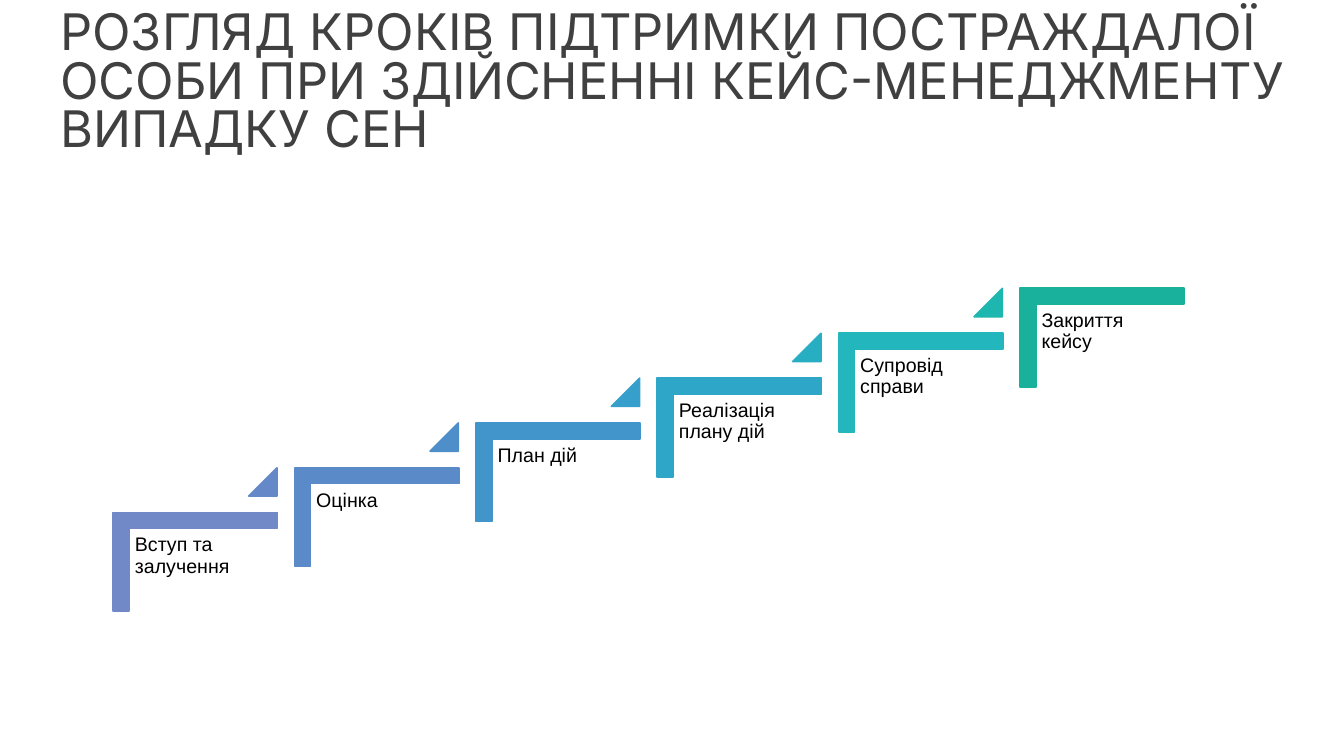
from dataclasses import dataclass
from typing import Optional

from pptx import Presentation
from pptx.dml.color import RGBColor
from pptx.enum.shapes import MSO_SHAPE
from pptx.enum.text import MSO_ANCHOR, PP_ALIGN
from pptx.shapes.autoshape import Shape
from pptx.slide import Slide
from pptx.util import Cm, Pt

CORNER = MSO_SHAPE.CORNER
TRIANGLE = MSO_SHAPE.ISOSCELES_TRIANGLE
TOP, MIDDLE = MSO_ANCHOR.TOP, MSO_ANCHOR.MIDDLE
LEFT = PP_ALIGN.LEFT

TITLE_GRAY = RGBColor(0x40, 0x40, 0x40)
BLACK = RGBColor(0x00, 0x00, 0x00)
PERIWINKLE = RGBColor(0x71, 0x89, 0xC7)
PERIWINKLE_BLUE = RGBColor(0x65, 0x89, 0xC8)
SOFT_BLUE = RGBColor(0x5A, 0x8B, 0xC8)
MID_BLUE = RGBColor(0x4E, 0x8E, 0xC9)
BLUE = RGBColor(0x42, 0x95, 0xCA)
SKY_BLUE = RGBColor(0x36, 0x9F, 0xCB)
CYAN_BLUE = RGBColor(0x2E, 0xA6, 0xC8)
CYAN = RGBColor(0x28, 0xAE, 0xC3)
TURQUOISE = RGBColor(0x23, 0xB6, 0xBD)
TEAL = RGBColor(0x1E, 0xB7, 0xAF)
GREEN = RGBColor(0x19, 0xB1, 0x9B)

# Each step lies further right and higher than the one before (cm)
STEP_RIGHT = 4.57
STEP_UP = 1.13


@dataclass(frozen=True)
class Box:
    left: float
    top: float
    width: float
    height: float

    def climbed(self, steps: int) -> "Box":
        return Box(self.left + steps * STEP_RIGHT, self.top - steps * STEP_UP,
                   self.width, self.height)

    def lengths(self) -> tuple[Cm, Cm, Cm, Cm]:
        return Cm(self.left), Cm(self.top), Cm(self.width), Cm(self.height)


@dataclass(frozen=True)
class TextStyle:
    font: str
    size: int
    color: RGBColor
    line_spacing: float
    anchor: MSO_ANCHOR
    side_inset: float
    top_inset: float


@dataclass(frozen=True)
class Step:
    label: str
    color: RGBColor
    arrow_color: Optional[RGBColor] = None


TITLE = ("РОЗГЛЯД КРОКІВ ПІДТРИМКИ ПОСТРАЖДАЛОЇ ОСОБИ "
         "ПРИ ЗДІЙСНЕННІ КЕЙС-МЕНЕДЖМЕНТУ ВИПАДКУ СЕН")
TITLE_BOX = Box(1.27, 0.56, 31.55, 3.15)
TITLE_STYLE = TextStyle("Inter", 36, TITLE_GRAY, 0.8, MIDDLE, 0.25, 0.13)
LABEL_STYLE = TextStyle("Arial", 14, BLACK, 0.9, TOP, 0.15, 0.15)

# Parts of the first step
CORNER_BOX = Box(3.68, 12.09, 2.49, 4.14)
LABEL_BOX = Box(3.25, 13.33, 3.73, 3.28)
ARROW_BOX = Box(6.27, 11.79, 0.71, 0.71)

STEPS = [
    Step("Вступ та залучення", PERIWINKLE, PERIWINKLE_BLUE),
    Step("Оцінка", SOFT_BLUE, MID_BLUE),
    Step("План дій", BLUE, SKY_BLUE),
    Step("Реалізація плану дій", CYAN_BLUE, CYAN),
    Step("Супровід справи", TURQUOISE, TEAL),
    Step("Закриття кейсу", GREEN),
]


def add_text(slide: Slide, box: Box, text: str, style: TextStyle) -> None:
    frame = slide.shapes.add_textbox(*box.lengths()).text_frame
    frame.word_wrap = True
    frame.vertical_anchor = style.anchor
    frame.margin_left = frame.margin_right = Cm(style.side_inset)
    frame.margin_top = frame.margin_bottom = Cm(style.top_inset)
    paragraph = frame.paragraphs[0]
    paragraph.alignment = LEFT
    paragraph.line_spacing = style.line_spacing
    run = paragraph.add_run()
    run.text = text
    run.font.name = style.font
    run.font.size = Pt(style.size)
    run.font.color.rgb = style.color


def add_solid(slide: Slide, kind: MSO_SHAPE, box: Box, color: RGBColor,
              adjustments: list[float]) -> Shape:
    solid = slide.shapes.add_shape(kind, *box.lengths())
    solid.shadow.inherit = False
    solid.fill.solid()
    solid.fill.fore_color.rgb = color
    solid.line.color.rgb = color
    solid.line.width = Pt(1.25)
    for index, value in enumerate(adjustments):
        solid.adjustments[index] = value
    return solid


def add_step(slide: Slide, number: int, step: Step) -> None:
    corner = add_solid(slide, CORNER, CORNER_BOX.climbed(number), step.color,
                       [0.161, 0.161])
    corner.rotation = 90
    add_text(slide, LABEL_BOX.climbed(number), step.label, LABEL_STYLE)
    if step.arrow_color is not None:
        add_solid(slide, TRIANGLE, ARROW_BOX.climbed(number), step.arrow_color, [1])


def main() -> None:
    presentation = Presentation()
    presentation.slide_width = Cm(33.87)
    presentation.slide_height = Cm(19.05)
    slide = presentation.slides.add_slide(presentation.slide_layouts[6])

    # Title
    add_text(slide, TITLE_BOX, TITLE, TITLE_STYLE)

    # Staircase of support steps
    for number, step in enumerate(STEPS):
        add_step(slide, number, step)

    presentation.save("out.pptx")


if __name__ == "__main__":
    main()
